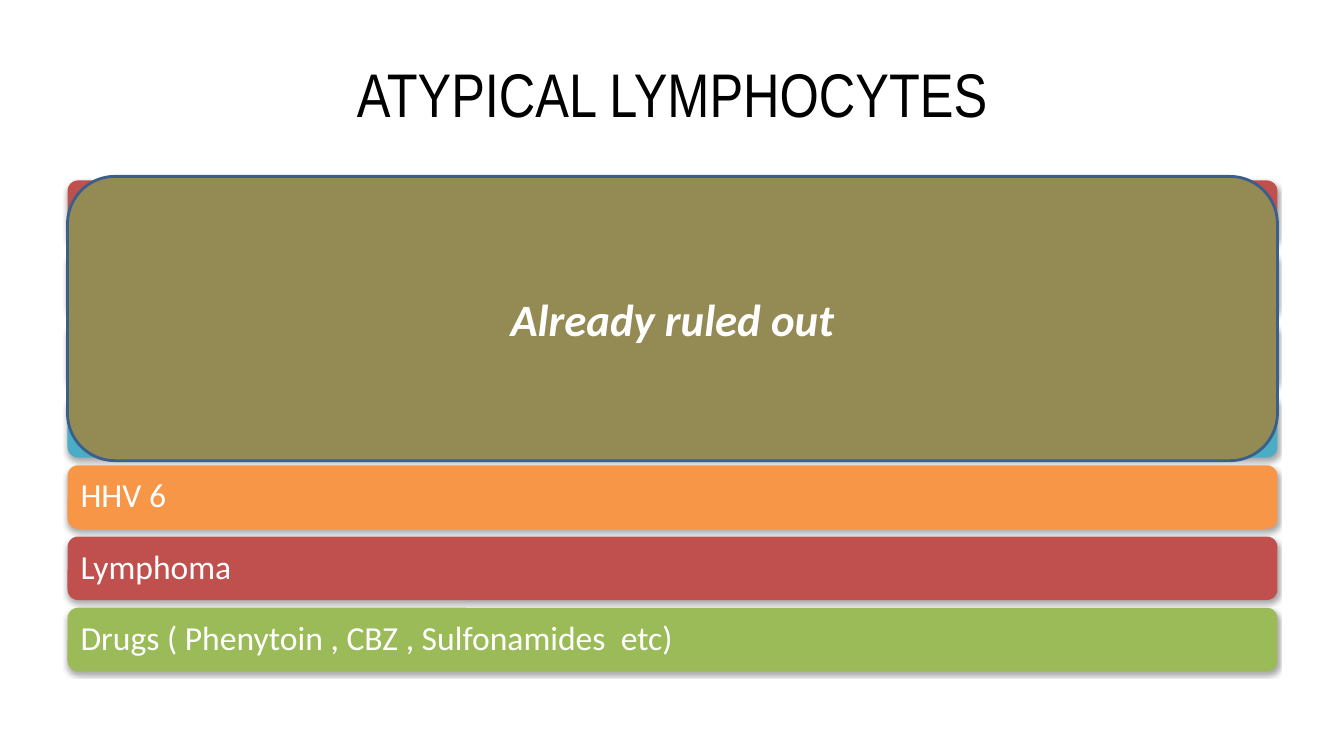
from dataclasses import dataclass

from lxml import etree
from pptx import Presentation
from pptx import util as u
from pptx.dml.color import RGBColor
from pptx.enum import shapes, text
from pptx.oxml.ns import qn


@dataclass(frozen=True)
class Theme:
    title_font: str = "Arial Narrow"
    body_font: str = "Calibri"
    title_size: int = 44
    cover_size: int = 32
    bar_size: int = 24
    ink: str = "000000"
    light: str = "FFFFFF"
    cover_fill: str = "948A54"
    cover_line: str = "3A5F8C"
    accents: tuple = ("C0504D", "9BBB59", "8064A2", "4BACC6", "F79646")


class SlideBuilder:
    def __init__(self, page, theme):
        self.page = page
        self.theme = theme

    def label(self, shape, words, font, size, color, align, bold=False, italic=False):
        frame = shape.text_frame
        frame.word_wrap = True
        frame.vertical_anchor = text.MSO_ANCHOR.MIDDLE
        para = frame.paragraphs[0]
        para.alignment = align
        span = para.add_run()
        span.text = words
        span.font.name = font
        span.font.size = u.Pt(size)
        span.font.bold = bold
        span.font.italic = italic
        span.font.color.rgb = RGBColor.from_string(color)
        return para

    def title(self, words, left, top, width, height):
        box = self.page.shapes.add_textbox(*map(u.Inches, (left, top, width, height)))
        self.label(box, words, self.theme.title_font, self.theme.title_size,
                   self.theme.ink, text.PP_ALIGN.CENTER)

    def rounded(self, left, top, width, height, fill):
        box = self.page.shapes.add_shape(
            shapes.MSO_SHAPE.ROUNDED_RECTANGLE,
            *map(u.Inches, (left, top, width, height)))
        box.shadow.inherit = False
        box.fill.solid()
        box.fill.fore_color.rgb = RGBColor.from_string(fill)
        return box

    def soft_shadow(self, box):
        effects = box.element.spPr.find(qn("a:effectLst"))
        shadow = etree.SubElement(
            effects, qn("a:outerShdw"), blurRad=str(u.Pt(3.1)), dist=str(u.Pt(1.8)),
            dir="5400000", rotWithShape="0")
        color = etree.SubElement(shadow, qn("a:srgbClr"), val=self.theme.ink)
        etree.SubElement(color, qn("a:alpha"), val="35000")

    def bar(self, words, left, top, width, height, fill):
        box = self.rounded(left, top, width, height, fill)
        box.line.fill.background()
        self.soft_shadow(box)
        if words:
            para = self.label(box, words, self.theme.body_font, self.theme.bar_size,
                              self.theme.light, text.PP_ALIGN.LEFT)
            para.line_spacing = 0.9

    def cover(self, words, left, top, width, height):
        box = self.rounded(left, top, width, height, self.theme.cover_fill)
        box.line.color.rgb = RGBColor.from_string(self.theme.cover_line)
        box.line.width = u.Pt(2)
        self.label(box, words, self.theme.body_font, self.theme.cover_size,
                   self.theme.light, text.PP_ALIGN.CENTER, bold=True, italic=True)


def main():
    deck = Presentation()
    deck.slide_width = u.Inches(13.33)
    deck.slide_height = u.Inches(7.5)
    theme = Theme()
    builder = SlideBuilder(deck.slides.add_slide(deck.slide_layouts[6]), theme)
    left, width = 0.67, 12

    # Heading
    builder.title("ATYPICAL LYMPHOCYTES", left, 0.3, width, 1.25)

    # Stack of causes; the first four lie under the cover
    causes = [""] * 4 + ["HHV 6", "Lymphoma",
                         "Drugs ( Phenytoin , CBZ , Sulfonamides  etc)"]
    first_top, last_top = 1.79, 6.03
    pitch = (last_top - first_top) / (len(causes) - 1)
    for index, cause in enumerate(causes):
        fill = theme.accents[index % len(theme.accents)]
        builder.bar(cause, left, first_top + index * pitch, width, 0.63, fill)

    # Cover over the excluded causes
    builder.cover("Already ruled out", left, 1.75, width, 2.82)

    deck.save("out.pptx")


if __name__ == "__main__":
    main()
